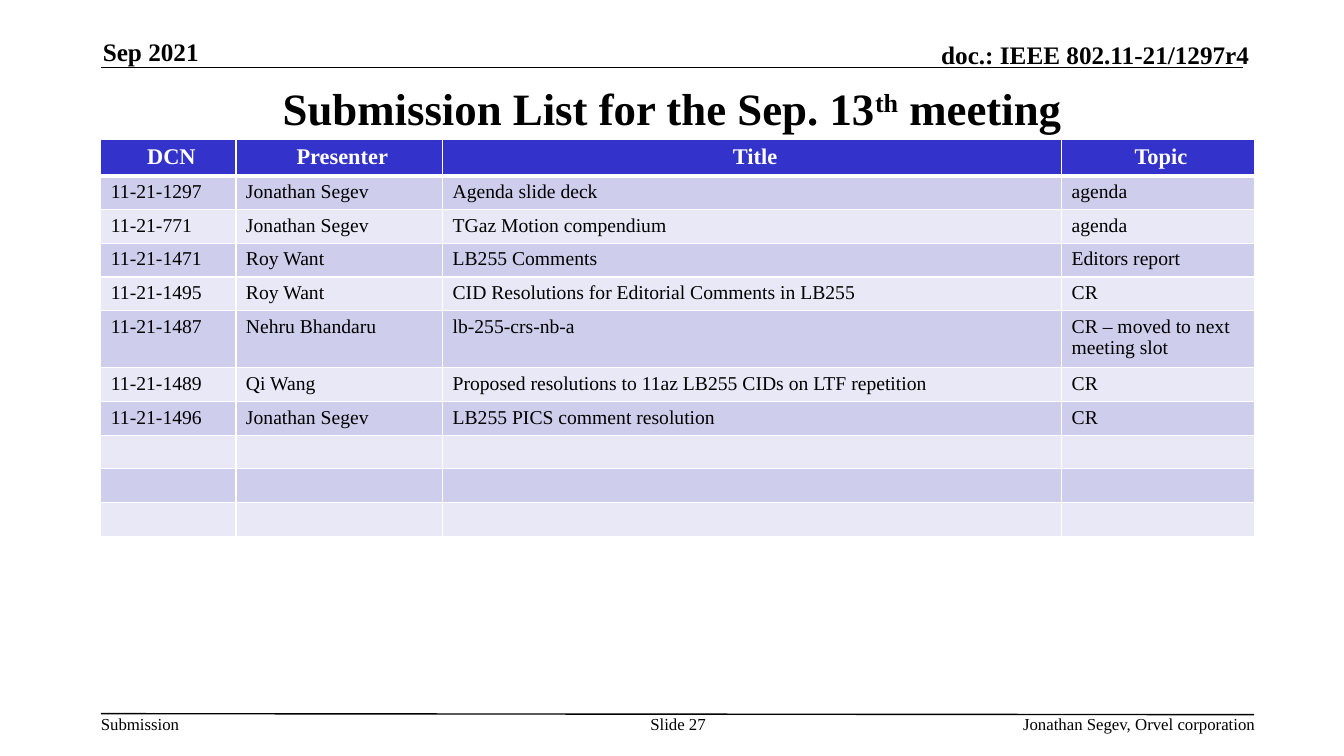
from dataclasses import dataclass

from lxml.etree import SubElement
from pptx import Presentation
from pptx.dml.color import RGBColor as RGB
from pptx.enum.shapes import MSO_CONNECTOR as Connector
from pptx.enum.text import MSO_ANCHOR as Anchor, PP_ALIGN as Align
from pptx.oxml.ns import qn
from pptx.util import Inches, Pt


@dataclass(frozen=True)
class Theme:
    font: str = "Times New Roman"
    text: RGB = RGB.from_string("000000")
    white: RGB = RGB.from_string("FFFFFF")
    header: RGB = RGB.from_string("3333CC")
    bands: tuple = (RGB.from_string("CECEEC"), RGB.from_string("E8E8F6"))
    title_size: int = 32
    top_size: int = 18
    footer_size: int = 12
    header_size: int = 16
    body_size: int = 14


theme = Theme()


def style(p, size, color=theme.text, bold=False, align=Align.LEFT):
    p.alignment = align
    p.font.name = theme.font
    p.font.size = Pt(size)
    p.font.bold = bold
    p.font.color.rgb = color


def set_borders(cell, widths):
    tcPr = cell._tc.get_or_add_tcPr()
    for side, width in widths.items():
        ln = SubElement(tcPr, qn(f"a:ln{side}"), w=str(Pt(width)))
        fill = SubElement(ln, qn("a:solidFill"))
        SubElement(fill, qn("a:srgbClr"), val=str(theme.white))


prs = Presentation()
prs.slide_width = Inches(13.33)
prs.slide_height = Inches(7.5)
s = prs.slides.add_slide(prs.slide_layouts[6])

for x1, y1, x2, y2 in [(1, 0.67, 12.33, 0.67), (1, 7.08, 12.44, 7.09)]:
    rule = s.shapes.add_connector(
        Connector.STRAIGHT, Inches(x1), Inches(y1), Inches(x2), Inches(y2)
    )
    rule.line.color.rgb = theme.text
    rule.line.width = Pt(1)
    SubElement(rule._element.spPr, qn("a:effectLst"))

labels = [
    ("Submission", (1, 7.08, 0.79, 0.2), theme.footer_size, False, Align.LEFT, Anchor.TOP),
    ("doc.: IEEE 802.11-21/1297r4", (7.29, 0.39, 5.1, 0.3), theme.top_size, True, Align.RIGHT, Anchor.BOTTOM),
    ("Slide 27", (6.34, 7.08, 0.77, 0.4), theme.footer_size, False, Align.CENTER, Anchor.TOP),
    ("Jonathan Segev, Orvel corporation", (7.81, 7.08, 4.64, 0.2), theme.footer_size, False, Align.RIGHT, Anchor.TOP),
    ("Sep 2021", (1.02, 0.36, 2.73, 0.3), theme.top_size, True, Align.LEFT, Anchor.BOTTOM),
]
for text, box, size, bold, align, anchor in labels:
    tf = s.shapes.add_textbox(*map(Inches, box)).text_frame
    tf.word_wrap = True
    tf.vertical_anchor = anchor
    tf.margin_left = tf.margin_right = tf.margin_top = tf.margin_bottom = 0
    p = tf.paragraphs[0]
    p.text = text
    style(p, size, bold=bold, align=align)

title = s.shapes.add_textbox(Inches(1), Inches(0.75), Inches(11.33), Inches(0.64))
tf = title.text_frame
tf.word_wrap = True
tf.vertical_anchor = Anchor.MIDDLE
p = tf.paragraphs[0]
style(p, theme.title_size, bold=True, align=Align.CENTER)
for text, baseline in [("Submission List for the Sep. 13", 0), ("th", 30000), (" meeting", 0)]:
    r = p.add_run()
    r.text = text
    if baseline:
        r.font._element.set("baseline", str(baseline))

submissions = [
    ("DCN", "Presenter", "Title", "Topic"),
    ("11-21-1297", "Jonathan Segev", "Agenda slide deck", "agenda"),
    ("11-21-771", "Jonathan Segev", "TGaz Motion compendium", "agenda"),
    ("11-21-1471", "Roy Want", "LB255 Comments", "Editors report"),
    ("11-21-1495", "Roy Want", "CID Resolutions for Editorial Comments in LB255", "CR"),
    ("11-21-1487", "Nehru Bhandaru", "lb-255-crs-nb-a", "CR – moved to next meeting slot"),
    ("11-21-1489", "Qi Wang", "Proposed resolutions to 11az LB255 CIDs on LTF repetition", "CR"),
    ("11-21-1496", "Jonathan Segev", "LB255 PICS comment resolution", "CR"),
] + [("",) * 4] * 3
column_widths = [1.34, 2.05, 6.14, 1.91]
row_heights = [0.35] + [0.31] * 4 + [0.53] + [0.31] * 5

table = s.shapes.add_table(
    len(submissions), len(column_widths), Inches(1), Inches(1.38),
    Inches(sum(column_widths)), Inches(sum(row_heights)),
).table
table.horz_banding = False
for column, width in zip(table.columns, column_widths):
    column.width = Inches(width)
for i, (row, height, values) in enumerate(zip(table.rows, row_heights, submissions)):
    row.height = Inches(height)
    is_header = i == 0
    for cell, value in zip(row.cells, values):
        set_borders(cell, {"L": 1, "R": 1, "T": 3 if i == 1 else 1, "B": 3 if is_header else 1})
        cell.fill.solid()
        cell.fill.fore_color.rgb = theme.header if is_header else theme.bands[(i - 1) % 2]
        cell.margin_left = Inches(0.1)
        cell.margin_right = Inches(0.04 if is_header else 0.1)
        cell.margin_top = cell.margin_bottom = Inches(0.05)
        p = cell.text_frame.paragraphs[0]
        if is_header:
            style(p, theme.header_size, theme.white, True, Align.CENTER)
        else:
            style(p, theme.body_size)
        if value:
            p.text = value
        else:
            SubElement(p._p, qn("a:endParaRPr"), sz=str(theme.body_size * 100))

prs.save("out.pptx")
